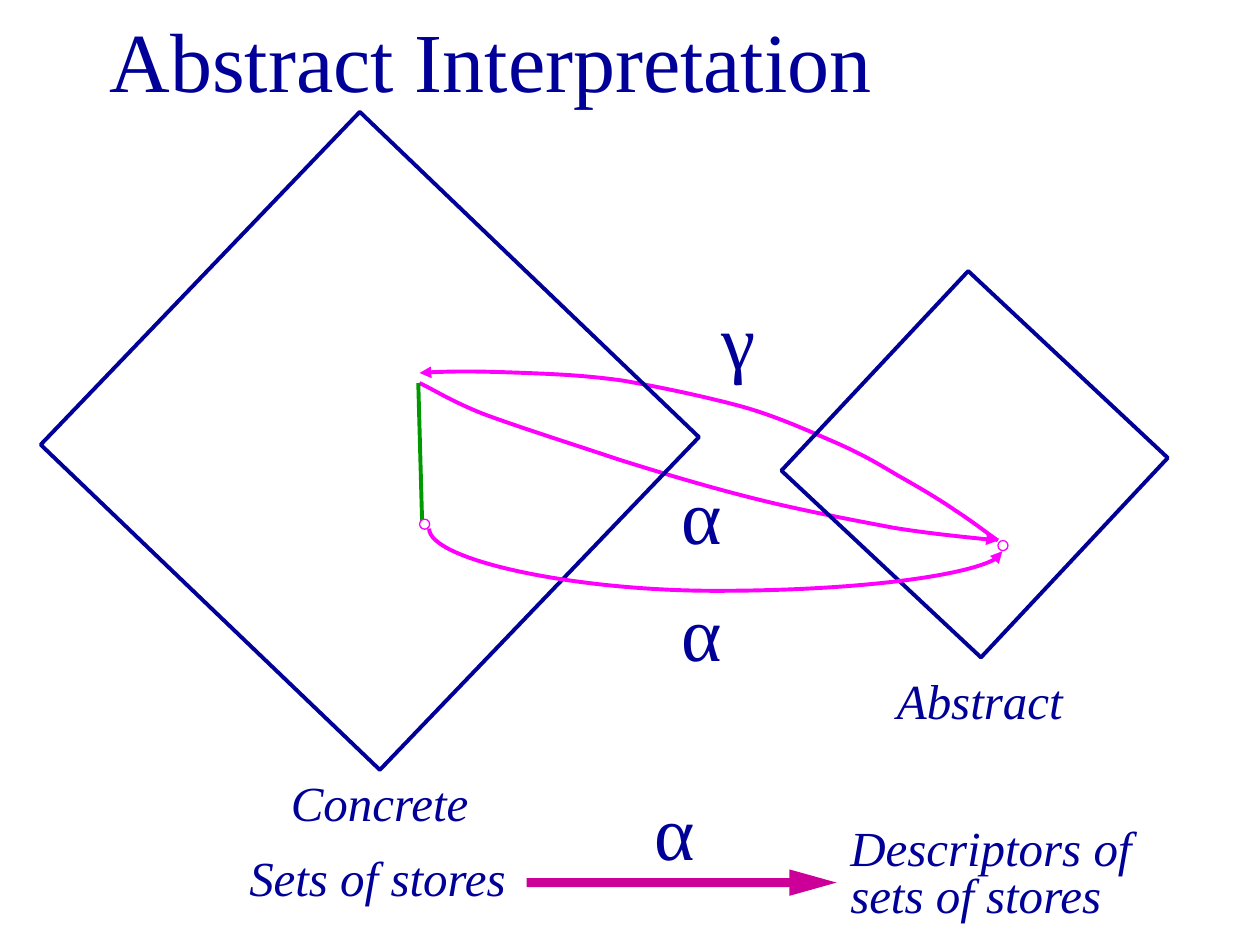
from pptx import Presentation, util as u
from pptx.dml.color import RGBColor
from pptx.enum import shapes as sh, text as tx
from pptx.oxml import parse_xml
from pptx.oxml.ns import nsdecls, qn

NAVY, PINK, GREEN, PLUM, WHITE = "000099", "FF00FF", "009900", "CC0099", "FFFFFF"
FONT = "Times New Roman"
KIND = sh.MSO_SHAPE


def rgb(code):
    return RGBColor.from_string(code)


def inch(*nums):
    return [u.Inches(n) for n in nums]


def write(par, words, size, slant=False):
    run = par.add_run()
    run.text = words
    font = run.font
    font.name, font.size, font.italic = FONT, u.Pt(size), slant
    font.color.rgb = rgb(NAVY)


def stroke(item, color, width=2.25, head=False):
    item.line.color.rgb = rgb(color)
    item.line.width = u.Pt(width)
    if head:
        item.line._get_or_add_ln().append(
            parse_xml(f'<a:tailEnd {nsdecls("a")} type="triangle"/>'))


def label(slide, box, lines, fill=None, space=None):
    """Italic caption, one paragraph per line."""
    item = slide.shapes.add_textbox(*inch(*box))
    frame = item.text_frame
    frame.word_wrap = False
    frame.auto_size = tx.MSO_AUTO_SIZE.SHAPE_TO_FIT_TEXT
    if fill:
        item.fill.solid()
        item.fill.fore_color.rgb = rgb(fill)
    for num, words in enumerate(lines):
        par = frame.add_paragraph() if num else frame.paragraphs[0]
        par.line_spacing = space
        write(par, words, 28, True)


def greek(slide, sign, left, top, width=0.59):
    """Large centred letter beside an arrow."""
    frame = slide.shapes.add_textbox(*inch(left, top, width, 0.83)).text_frame
    frame.word_wrap = False
    frame.auto_size = tx.MSO_AUTO_SIZE.SHAPE_TO_FIT_TEXT
    frame.vertical_anchor = tx.MSO_ANCHOR.MIDDLE
    par = frame.paragraphs[0]
    par.alignment = tx.PP_ALIGN.CENTER
    write(par, sign, 44)


def shape(slide, kind, box, fill=None, turn=0):
    item = slide.shapes.add_shape(kind, *inch(*box))
    item.shadow.inherit = False
    item.rotation = turn
    if fill:
        item.fill.solid()
        item.fill.fore_color.rgb = rgb(fill)
    else:
        item.fill.background()
    return item


def diamond(slide, box, turn):
    stroke(shape(slide, KIND.RECTANGLE, box, turn=turn), NAVY)


def dot(slide, left, top):
    stroke(shape(slide, KIND.OVAL, (left, top, 0.08, 0.08), WHITE), PINK, 0.75)


def curve(slide, *pts):
    """Bezier arrow: a start point, then three points per segment."""
    pts = [inch(*pt) for pt in pts]
    form = slide.shapes.build_freeform(*pts[0])
    form.add_line_segments(pts[1:], close=False)
    item = form.convert_to_shape()
    item.shadow.inherit = False
    item.fill.background()
    stroke(item, PINK, head=True)
    # Join every three straight steps into one cubic segment
    steps = list(item._element.iter(qn("a:lnTo")))
    for i in range(0, len(steps), 3):
        cubic = parse_xml(f'<a:cubicBezTo {nsdecls("a")}/>')
        steps[i].addprevious(cubic)
        for step in steps[i:i + 3]:
            cubic.append(step[0])
            step.getparent().remove(step)


def link(slide, kind, start, end, color, head=False):
    item = slide.shapes.add_connector(kind, *inch(*start, *end))
    stroke(item, color, head=head)
    item._element.spPr.append(parse_xml(f'<a:effectLst {nsdecls("a")}/>'))
    return item


def bend(slide):
    """Curved connector that sags below both dots."""
    item = link(slide, sh.MSO_CONNECTOR.CURVE, (5.77, 2.01), (5.59, 6.56),
                PINK, True)
    props = item._element.spPr
    props.find(qn("a:xfrm")).set("rot", str(270 * 60000))
    geom = props.find(qn("a:prstGeom"))
    for old in list(geom):
        geom.remove(old)
    geom.append(parse_xml(f'<a:avLst {nsdecls("a")}>'
                          '<a:gd name="adj1" fmla="val 274800"/></a:avLst>'))


def title(slide, words):
    item = slide.shapes.title
    item.left, item.top, item.width, item.height = inch(0.77, 0, 8.5, 0.92)
    frame = item.text_frame
    frame.auto_size = tx.MSO_AUTO_SIZE.NONE
    frame.vertical_anchor = tx.MSO_ANCHOR.BOTTOM
    frame.paragraphs[0].alignment = tx.PP_ALIGN.LEFT
    write(frame.paragraphs[0], words, 48)


def main():
    prs = Presentation()
    prs.slide_width, prs.slide_height = inch(10, 7.5)
    slide = prs.slides.add_slide(prs.slide_layouts[5])
    title(slide, "Abstract Interpretation")

    # Upper alpha and gamma arrows
    greek(slide, "α", 5.27, 3.66)
    curve(slide, (3.33, 3.04),
          (3.42, 3.08), (3.59, 3.19), (3.85, 3.29),
          (4.12, 3.39), (4.56, 3.53), (4.92, 3.65),
          (5.27, 3.76), (5.64, 3.87), (6, 3.96),
          (6.36, 4.05), (6.78, 4.13), (7.1, 4.19),
          (7.42, 4.24), (7.75, 4.27), (7.92, 4.29))
    greek(slide, "γ", 5.63, 2.27, 0.45)
    curve(slide, (7.92, 4.29),
          (7.86, 4.25), (7.72, 4.14), (7.58, 4.05),
          (7.45, 3.96), (7.28, 3.86), (7.12, 3.77),
          (6.97, 3.68), (6.85, 3.61), (6.65, 3.52),
          (6.44, 3.43), (6.18, 3.31), (5.9, 3.23),
          (5.61, 3.15), (5.23, 3.07), (4.94, 3.02),
          (4.65, 2.98), (4.43, 2.97), (4.17, 2.96),
          (3.9, 2.95), (3.62, 2.94), (3.33, 2.96))

    # Abstract and concrete domains
    diamond(slide, (6.65, 2.6, 2.17, 2.17), 43.1)
    label(slide, (7.02, 5.27, 1.52, 0.57), ["Abstract"])
    diamond(slide, (1.07, 1.67, 3.73, 3.66), 43.8)
    label(slide, (2.21, 6.08, 1.62, 0.57), ["Concrete"])

    # Elements and the lower alpha arrow
    link(slide, sh.MSO_CONNECTOR.STRAIGHT, (3.32, 3.04), (3.35, 4.14), GREEN)
    dot(slide, 3.33, 4.12)
    dot(slide, 7.92, 4.29)
    bend(slide)
    greek(slide, "α", 5.27, 4.59)

    # Summary row
    label(slide, (1.88, 6.68, 2.25, 0.57), ["Sets of stores"], WHITE)
    label(slide, (6.65, 6.53, 2.43, 0.85),
          ["Descriptors of", "sets of stores"], WHITE, 0.8)
    arrow = shape(slide, KIND.RIGHT_ARROW, (4.18, 6.9, 2.46, 0.21), PLUM)
    arrow.line.fill.background()
    arrow.adjustments[0], arrow.adjustments[1] = 0.333, 1.783
    greek(slide, "α", 5.06, 6.17)

    prs.save("out.pptx")


if __name__ == "__main__":
    main()
